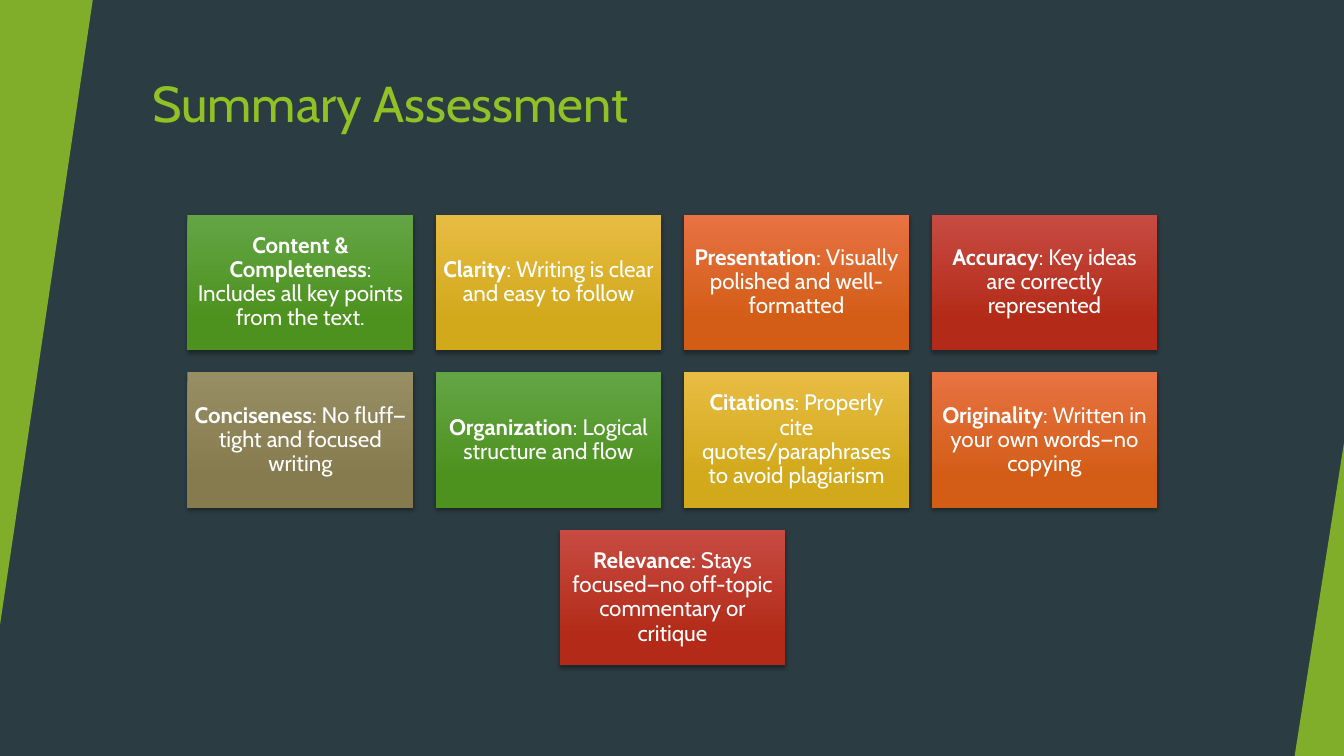
from lxml.etree import SubElement
from pptx import Presentation
from pptx.dml.color import RGBColor
from pptx.enum.shapes import MSO_SHAPE
from pptx.enum.text import MSO_ANCHOR, PP_ALIGN
from pptx.oxml.ns import qn
from pptx.util import Inches, Pt

FONT = "Cabin"
GREEN = ("63A545", "4D921E")
GOLD = ("E7BC43", "D2A91B")
ORANGE = ("E87242", "D35D16")
RED = ("C74B42", "B32B18")
OLIVE = ("988E64", "857B4E")

ROWS = [
    [
        ("Content & Completeness", ": Includes all key points from the text.", GREEN),
        ("Clarity", ": Writing is clear and easy to follow", GOLD),
        ("Presentation", ": Visually polished and well-formatted", ORANGE),
        ("Accuracy", ": Key ideas are correctly represented", RED),
    ],
    [
        ("Conciseness", ": No fluff—tight and focused writing", OLIVE),
        ("Organization", ": Logical structure and flow", GREEN),
        ("Citations", ": Properly cite quotes/paraphrases to avoid plagiarism", GOLD),
        ("Originality", ": Written in your own words—no copying", ORANGE),
    ],
    [
        ("Relevance", ": Stays focused—no off-topic commentary or critique", RED),
    ],
]


def paint(color, code):
    color.rgb = RGBColor.from_string(code)


def style(run, size, code, bold=False):
    run.font.name = FONT
    run.font.size = Pt(size)
    run.font.bold = bold
    paint(run.font.color, code)


def add_title(slide, text, left, top, width, height):
    box = slide.shapes.add_textbox(
        Inches(left), Inches(top), Inches(width), Inches(height))
    frame = box.text_frame
    frame.word_wrap = True
    frame.vertical_anchor = MSO_ANCHOR.TOP
    frame.text = text
    style(frame.paragraphs[0].runs[0], 36, "90C226")


def add_wedge(slide, left, top, width, height, turn=0):
    wedge = slide.shapes.add_shape(
        MSO_SHAPE.ISOSCELES_TRIANGLE,
        Inches(left), Inches(top), Inches(width), Inches(height))
    wedge.adjustments[0] = 1
    wedge.rotation = turn
    wedge.shadow.inherit = False
    wedge.line.fill.background()
    wedge.fill.solid()
    paint(wedge.fill.fore_color, "90C226")
    tint = wedge.fill._xPr.find(".//" + qn("a:srgbClr"))
    SubElement(tint, qn("a:alpha"), val="85000")


def add_shadow(shape):
    shape.shadow.inherit = False
    effects = shape._element.spPr.find(qn("a:effectLst"))
    shadow = SubElement(
        effects, qn("a:outerShdw"), blurRad=str(Pt(3)), dist=str(Pt(2)),
        dir="5400000", algn="ctr", rotWithShape="0")
    tint = SubElement(shadow, qn("a:srgbClr"), val="000000")
    SubElement(tint, qn("a:alpha"), val="35000")


def add_card(slide, head, body, shades, left, top, width, height):
    card = slide.shapes.add_shape(
        MSO_SHAPE.RECTANGLE,
        Inches(left), Inches(top), Inches(width), Inches(height))
    card.line.fill.background()
    card.fill.gradient()
    card.fill.gradient_angle = 270
    for stop, place, shade in zip(card.fill.gradient_stops, (0, 0.78), shades):
        stop.position = place
        paint(stop.color, shade)
    add_shadow(card)

    frame = card.text_frame
    frame.word_wrap = True
    frame.vertical_anchor = MSO_ANCHOR.MIDDLE
    frame.margin_left = frame.margin_right = Inches(0.07)
    frame.margin_top = frame.margin_bottom = Inches(0.07)
    line = frame.paragraphs[0]
    line.alignment = PP_ALIGN.CENTER
    line.line_spacing = 0.9
    for text, bold in ((head, True), (body, False)):
        run = line.add_run()
        run.text = text
        style(run, 16, "FFFFFF", bold)


def add_grid(slide, rows, left, top, width, height):
    gap = 0.22
    wide = (width + gap) / 4 - gap
    tall = (height + gap) / len(rows) - gap
    for r, row in enumerate(rows):
        start = left + (width - len(row) * (wide + gap) + gap) / 2
        for c, (head, body, shades) in enumerate(row):
            add_card(slide, head, body, shades, start + c * (wide + gap),
                     top + r * (tall + gap), wide, tall)


def main():
    deck = Presentation()
    deck.slide_width = Inches(13.33)
    deck.slide_height = Inches(7.5)
    slide = deck.slides.add_slide(deck.slide_layouts[6])
    slide.background.fill.solid()
    paint(slide.background.fill.fore_color, "2C3C43")
    add_title(slide, "Summary Assessment", 1.41, 0.67, 11.15, 1.2)
    add_wedge(slide, 0, 0, 0.92, 6.2, 180)
    add_wedge(slide, 12.84, 4.39, 0.49, 3.11)
    add_grid(slide, ROWS, 1.86, 2.13, 9.62, 4.47)
    deck.save("out.pptx")


if __name__ == "__main__":
    main()
